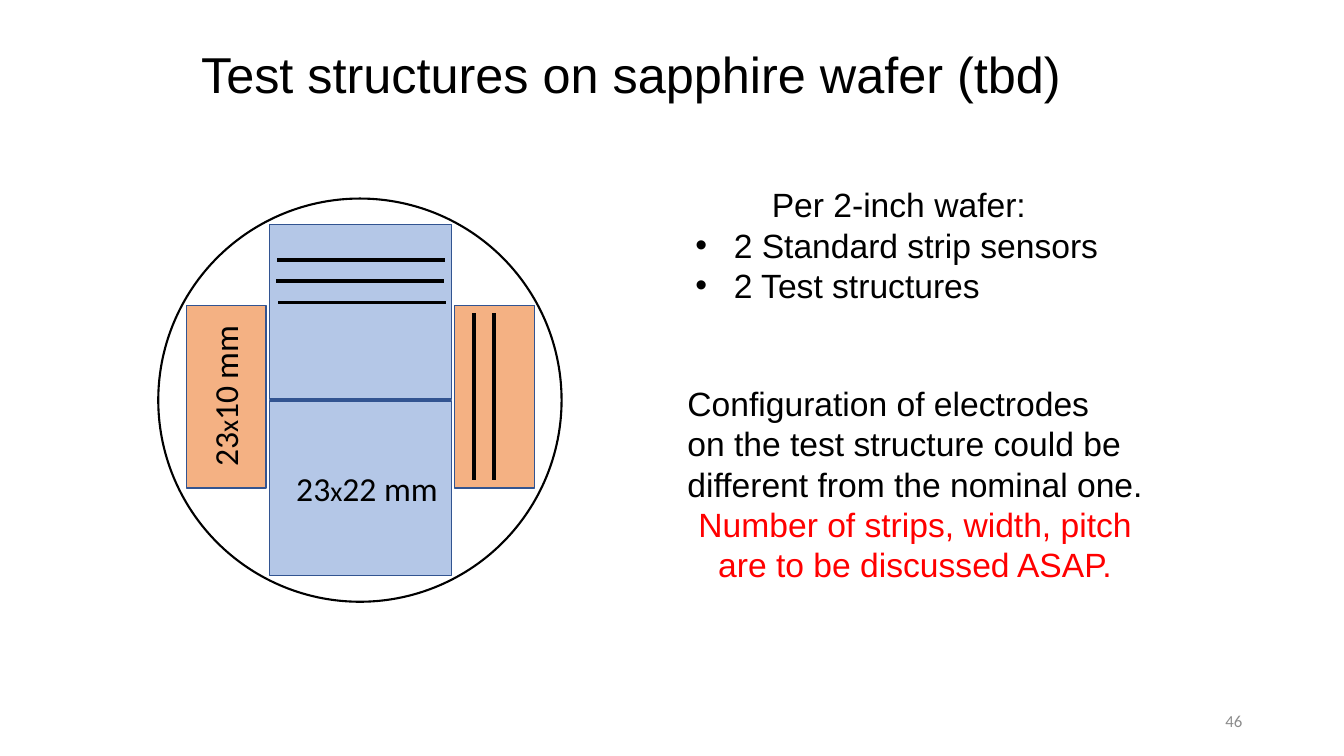
from dataclasses import dataclass

from lxml import etree
from pptx import Presentation
from pptx.dml.color import RGBColor as Color
from pptx.enum.shapes import MSO_CONNECTOR as Connector, MSO_SHAPE as Shape
from pptx.enum.text import MSO_ANCHOR as Anchor, MSO_AUTO_SIZE as AutoSize, PP_ALIGN as Align
from pptx.oxml.ns import qn
from pptx.util import Pt

PX = 9144  # EMU per px, 100 px to the inch


@dataclass(frozen=True)
class Theme:
    ink: str = "000000"
    alert: str = "FF0000"
    muted: str = "8C8C8C"
    sensor: str = "B4C7E7"
    test: str = "F4B183"
    edge: str = "325491"
    text_font: str = "Arial"
    label_font: str = "Calibri"
    title_size: int = 36
    body_size: int = 24
    times_size: int = 20
    number_size: int = 12


THEME = Theme()


def emu(*lengths):
    return [length * PX for length in lengths]


def set_font(font, name, size, color=THEME.ink):
    font.name = name
    font.size = Pt(size)
    font.color.rgb = Color.from_string(color)


def add_title(page, text, *place):
    title = page.shapes.title
    title.left, title.top, title.width, title.height = emu(*place)
    title.text_frame.text = text
    title.text_frame.vertical_anchor = Anchor.MIDDLE
    para = title.text_frame.paragraphs[0]
    para.alignment = Align.CENTER
    para.line_spacing = 0.9
    set_font(para.font, THEME.text_font, THEME.title_size)


def add_outline(shapes, kind, place, fill, line, weight):
    shape = shapes.add_shape(kind, *emu(*place))
    shape.shadow.inherit = False
    if fill:
        shape.fill.solid()
        shape.fill.fore_color.rgb = Color.from_string(fill)
    else:
        shape.fill.background()
    shape.line.color.rgb = Color.from_string(line)
    shape.line.width = Pt(weight)


def add_strip(page, *ends):
    strip = page.shapes.add_connector(Connector.STRAIGHT, *emu(*ends))
    strip.line.color.rgb = Color.from_string(THEME.ink)
    strip.line.width = Pt(2.5)
    etree.SubElement(strip.element.spPr, qn("a:effectLst"))


def add_box(page, *place):
    box = page.shapes.add_textbox(*emu(*place))
    box.text_frame.word_wrap = False
    box.text_frame.auto_size = AutoSize.SHAPE_TO_FIT_TEXT
    return box


def add_size_label(page, left, top, height_mm, rotation=0):
    box = add_box(page, left, top, 164, 50)
    box.rotation = rotation
    para = box.text_frame.paragraphs[0]
    set_font(para.font, THEME.label_font, THEME.body_size)
    for text in ("23", "x", f"{height_mm} mm"):
        span = para.add_run()
        span.text = text
        span.font.size = Pt(THEME.times_size if text == "x" else THEME.body_size)


def add_bullet(para, indent):
    properties = para._p.get_or_add_pPr()
    properties.set("marL", str(indent * PX))
    properties.set("indent", str(-indent * PX))
    etree.SubElement(properties, qn("a:buFont"), typeface="Arial")
    etree.SubElement(properties, qn("a:buChar"), char="•")


def add_note(page, place, lines):
    """Each line is (text, alignment, color, bulleted)."""
    frame = add_box(page, *place).text_frame
    for index, (text, align, color, bulleted) in enumerate(lines):
        para = frame.add_paragraph() if index else frame.paragraphs[0]
        para.text = text
        para.alignment = align
        if bulleted:
            add_bullet(para, 38)
        set_font(para.font, THEME.text_font, THEME.body_size, color)


def add_page_number(page, number, *place):
    box = page.shapes.add_textbox(*emu(*place))
    box.text_frame.word_wrap = True
    box.text_frame.vertical_anchor = Anchor.MIDDLE
    para = box.text_frame.paragraphs[0]
    para.text = number
    para.alignment = Align.RIGHT
    set_font(para.font, THEME.label_font, THEME.number_size, THEME.muted)


def add_wafer(page):
    # Wafer outline, two stacked sensors, a test structure on each side
    add_outline(page.shapes, Shape.OVAL, (157, 197, 400, 400), None, THEME.ink, 1.5)
    sensors = page.shapes.add_group_shape()
    for top in (223, 398):
        add_outline(sensors.shapes, Shape.RECTANGLE, (267, top, 181, 173),
                    THEME.sensor, THEME.edge, 1)
    for left in (451, 185):
        add_outline(page.shapes, Shape.RECTANGLE, (left, 303, 79, 181),
                    THEME.test, THEME.edge, 1)

    # Electrode strips
    for left, y in ((275, 258), (274, 279), (276, 300)):
        add_strip(page, left, y, left + 166, y)
    for x in (470, 490):
        add_strip(page, x, 311, x, 476)

    # Dimensions
    add_size_label(page, 284, 459, 22)
    add_size_label(page, 141, 366, 10, rotation=270)


def main():
    deck = Presentation()
    deck.slide_width, deck.slide_height = emu(1333, 750)
    page = deck.slides.add_slide(deck.slide_layouts[5])

    add_title(page, "Test structures on sapphire wafer (tbd)", 51, 29, 1150, 95)
    add_wafer(page)

    # Notes beside the wafer
    add_note(page, (680, 178, 423, 131), [
        ("Per 2-inch wafer:", Align.CENTER, THEME.ink, False),
        ("2 Standard strip sensors", Align.LEFT, THEME.ink, True),
        ("2 Test structures", Align.LEFT, THEME.ink, True),
    ])
    add_note(page, (672, 375, 476, 212), [
        ("Configuration of electrodes", Align.LEFT, THEME.ink, False),
        ("on the test structure could be", Align.LEFT, THEME.ink, False),
        ("different from the nominal one.", Align.LEFT, THEME.ink, False),
        ("Number of strips, width, pitch", Align.CENTER, THEME.alert, False),
        ("are to be discussed ASAP.", Align.CENTER, THEME.alert, False),
    ])
    add_page_number(page, "46", 942, 695, 300, 40)

    deck.save("out.pptx")


if __name__ == "__main__":
    main()
